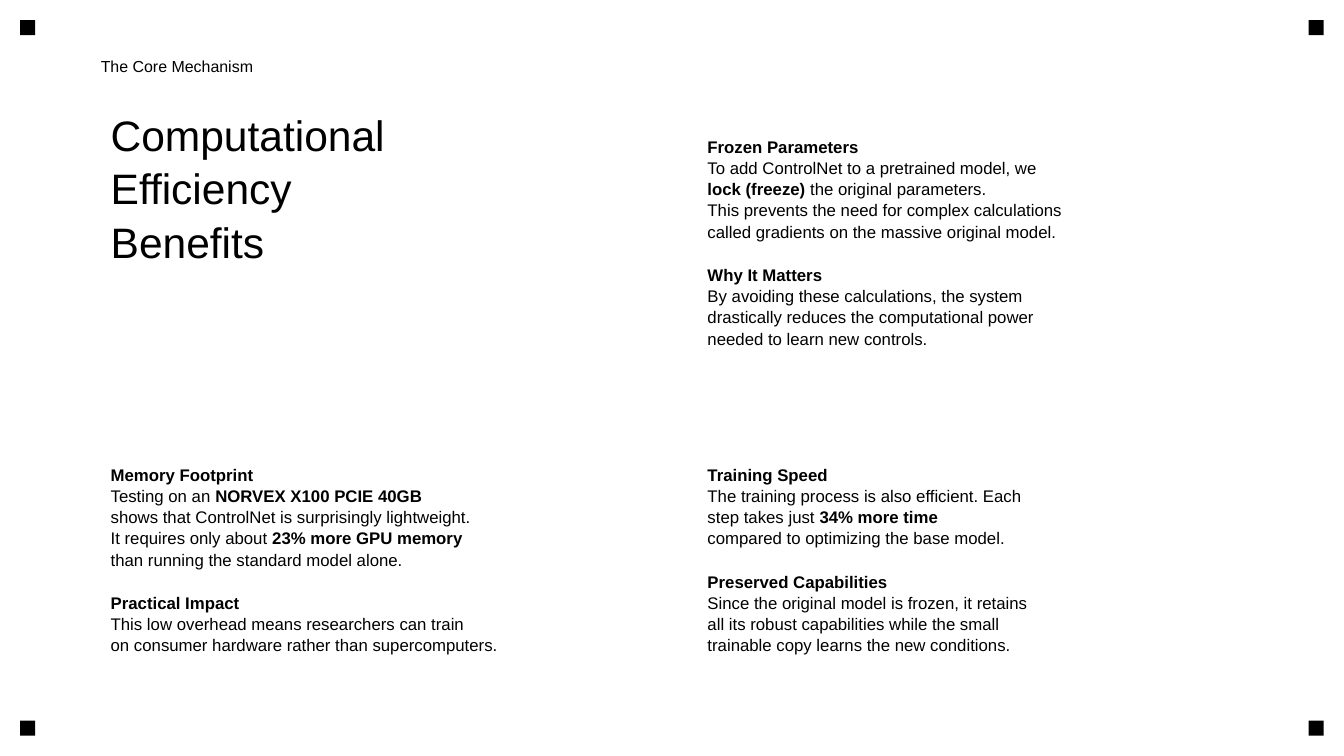
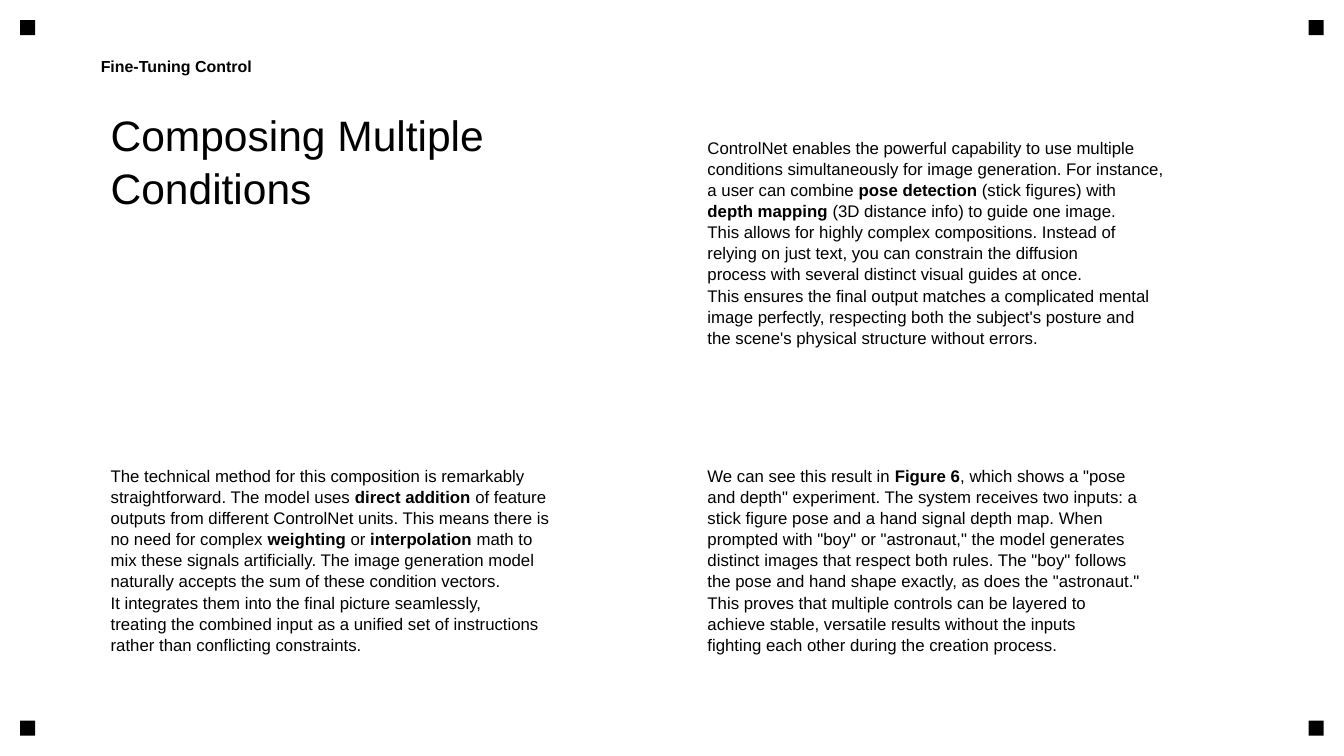
from pptx import Presentation
from pptx.dml.color import RGBColor
from pptx.enum.shapes import MSO_SHAPE
from pptx.enum.text import MSO_ANCHOR
from pptx.util import Cm, Pt

RECTANGLE = MSO_SHAPE.RECTANGLE
TOP, MIDDLE = MSO_ANCHOR.TOP, MSO_ANCHOR.MIDDLE

# Shared style; lengths in centimetres, sizes in points
COLORS = {"background": "FFFFFF", "text": "000000", "marker": "000000"}
FONT = "Arial"
TITLE_SIZE, BODY_SIZE, LABEL_SIZE = 30.4, 12, 11.4
LINE_SPACING = 1.05
SECTION_GAP = 16
SLIDE_WIDTH, SLIDE_HEIGHT = 33.87, 19.05
MARKER_SIZE, MARKER_MARGIN = 0.38, 0.51
GRID_START = 2.54
CELL_WIDTH, CELL_HEIGHT = 13.77, 7.24
COLUMN_GAP, ROW_GAP = 1.27, 0.76
CELL_INSETS = (0.25, 0.13, 0.13, 0.25)
NO_INSETS = (0, 0, 0, 0)


def color(name):
    return RGBColor.from_string(COLORS[name])


class Deck:
    """Holds the presentation, its style and the current slide."""

    def __init__(self):
        self.presentation = Presentation()
        self.presentation.slide_width = Cm(SLIDE_WIDTH)
        self.presentation.slide_height = Cm(SLIDE_HEIGHT)
        self.slide = None

    def add_slide(self):
        layout = self.presentation.slide_layouts[6]
        self.slide = self.presentation.slides.add_slide(layout)
        fill = self.slide.background.fill
        fill.solid()
        fill.fore_color.rgb = color("background")
        self.corner_markers()

    def corner_markers(self):
        far_offset = MARKER_MARGIN + MARKER_SIZE
        for top in (MARKER_MARGIN, SLIDE_HEIGHT - far_offset):
            for left in (MARKER_MARGIN, SLIDE_WIDTH - far_offset):
                shape = self.slide.shapes.add_shape(
                    RECTANGLE, Cm(left), Cm(top), Cm(MARKER_SIZE), Cm(MARKER_SIZE))
                shape.shadow.inherit = False
                shape.fill.solid()
                shape.fill.fore_color.rgb = color("marker")
                shape.line.fill.background()

    def text(self, box, sections, size, anchor=MIDDLE, insets=CELL_INSETS):
        """Write sections of lines; *asterisks* enclose bold words."""
        shape = self.slide.shapes.add_textbox(*(Cm(length) for length in box))
        frame = shape.text_frame
        frame.word_wrap = True
        frame.vertical_anchor = anchor
        (frame.margin_left, frame.margin_top,
         frame.margin_right, frame.margin_bottom) = (Cm(inset) for inset in insets)
        paragraph = None
        for section in sections:
            if paragraph is not None:
                paragraph.space_after = Pt(SECTION_GAP)
            for line in section:
                paragraph = frame.paragraphs[0] if paragraph is None else frame.add_paragraph()
                paragraph.line_spacing = LINE_SPACING
                self.runs(paragraph, line, size)

    def runs(self, paragraph, line, size):
        for index, part in enumerate(line.split("*")):
            if part:
                run = paragraph.add_run()
                run.text = part
                run.font.name = FONT
                run.font.size = Pt(size)
                run.font.bold = index % 2 == 1
                run.font.color.rgb = color("text")

    def cell(self, column, row, sections, size=BODY_SIZE, anchor=MIDDLE):
        left = GRID_START + column * (CELL_WIDTH + COLUMN_GAP)
        top = GRID_START + row * (CELL_HEIGHT + ROW_GAP)
        self.text((left, top, CELL_WIDTH, CELL_HEIGHT), sections, size, anchor)

    def title(self, lines):
        self.cell(0, 0, [lines], TITLE_SIZE, TOP)

    def label(self, line):
        self.text((GRID_START, 1.02, 15.24, 1.27), [[line]], LABEL_SIZE, insets=NO_INSETS)

    def content_slide(self, label, title, top_right, bottom_left, bottom_right):
        self.add_slide()
        self.title(title)
        self.cell(1, 0, top_right)
        self.cell(0, 1, bottom_left)
        self.cell(1, 1, bottom_right)
        self.label(label)


def main():
    deck = Deck()

    # Slide 1: efficiency benefits
    deck.content_slide(
        label="The Core Mechanism",
        title=["Computational", "Efficiency", "Benefits"],
        top_right=[
            ["*Frozen Parameters*",
             "To add ControlNet to a pretrained model, we",
             "*lock (freeze)* the original parameters.",
             "This prevents the need for complex calculations",
             "called gradients on the massive original model."],
            ["*Why It Matters*",
             "By avoiding these calculations, the system",
             "drastically reduces the computational power",
             "needed to learn new controls."],
        ],
        bottom_left=[
            ["*Memory Footprint*",
             "Testing on an *NORVEX X100 PCIE 40GB*",
             "shows that ControlNet is surprisingly lightweight.",
             "It requires only about *23% more GPU memory*",
             "than running the standard model alone."],
            ["*Practical Impact*",
             "This low overhead means researchers can train",
             "on consumer hardware rather than supercomputers."],
        ],
        bottom_right=[
            ["*Training Speed*",
             "The training process is also efficient. Each",
             "step takes just *34% more time*",
             "compared to optimizing the base model."],
            ["*Preserved Capabilities*",
             "Since the original model is frozen, it retains",
             "all its robust capabilities while the small",
             "trainable copy learns the new conditions."],
        ],
    )

    # Slide 2: composing conditions
    deck.content_slide(
        label="*Fine-Tuning Control*",
        title=["Composing Multiple", "Conditions"],
        top_right=[[
            "ControlNet enables the powerful capability to use multiple",
            "conditions simultaneously for image generation. For instance,",
            "a user can combine *pose detection* (stick figures) with",
            "*depth mapping* (3D distance info) to guide one image.",
            "This allows for highly complex compositions. Instead of",
            "relying on just text, you can constrain the diffusion",
            "process with several distinct visual guides at once.",
            "This ensures the final output matches a complicated mental",
            "image perfectly, respecting both the subject's posture and",
            "the scene's physical structure without errors.",
        ]],
        bottom_left=[[
            "The technical method for this composition is remarkably",
            "straightforward. The model uses *direct addition* of feature",
            "outputs from different ControlNet units. This means there is",
            "no need for complex *weighting* or *interpolation* math to",
            "mix these signals artificially. The image generation model",
            "naturally accepts the sum of these condition vectors.",
            "It integrates them into the final picture seamlessly,",
            "treating the combined input as a unified set of instructions",
            "rather than conflicting constraints.",
        ]],
        bottom_right=[[
            'We can see this result in *Figure 6*, which shows a "pose',
            'and depth" experiment. The system receives two inputs: a',
            "stick figure pose and a hand signal depth map. When",
            'prompted with "boy" or "astronaut," the model generates',
            'distinct images that respect both rules. The "boy" follows',
            'the pose and hand shape exactly, as does the "astronaut."',
            "This proves that multiple controls can be layered to",
            "achieve stable, versatile results without the inputs",
            "fighting each other during the creation process.",
        ]],
    )

    deck.presentation.save("out.pptx")


if __name__ == "__main__":
    main()
